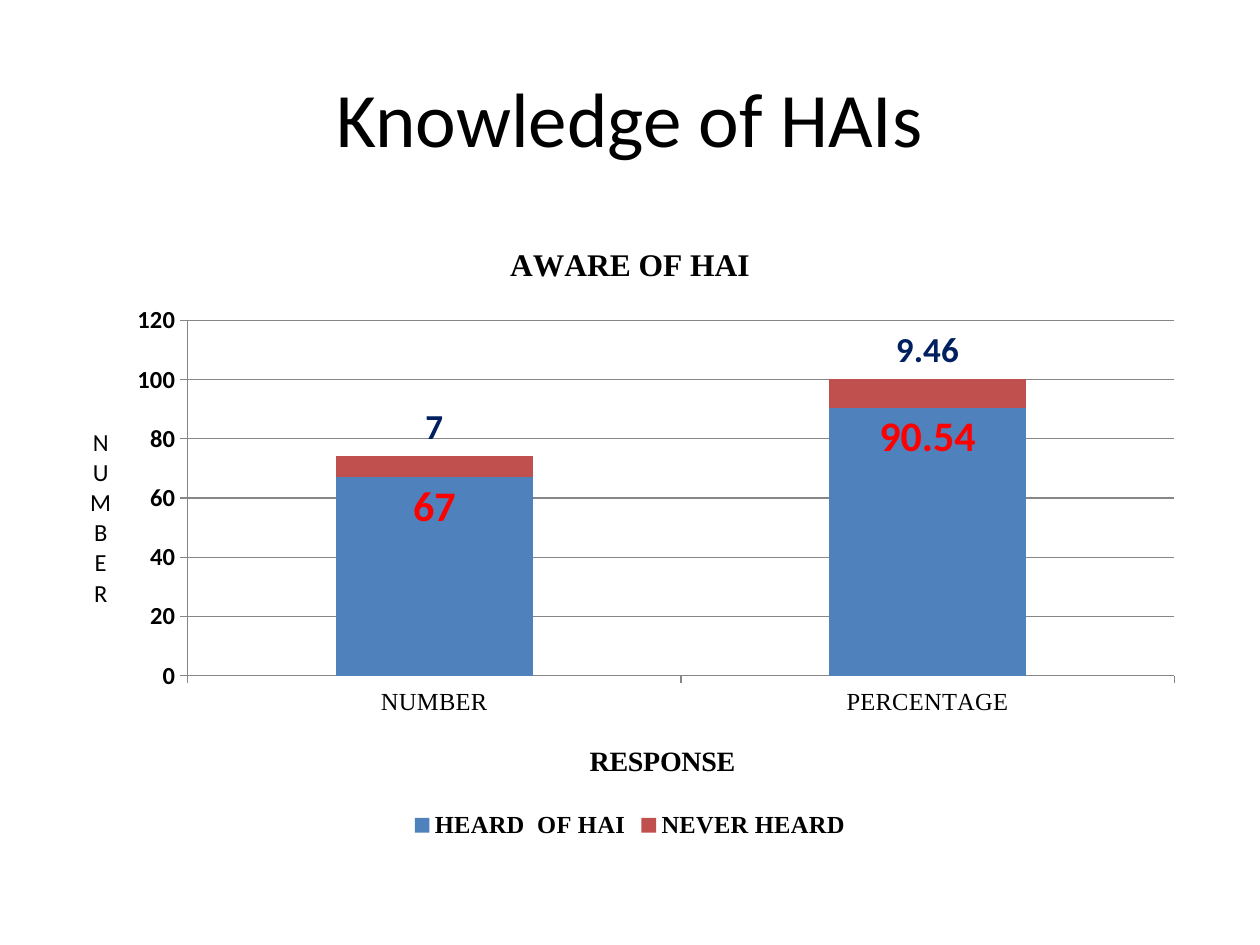
"""Build the slide about knowledge of HAIs with its stacked column chart."""
from lxml import etree
from pptx import Presentation
from pptx import util as u
from pptx.chart.data import CategoryChartData
from pptx.dml.color import RGBColor
from pptx.enum import chart as charts, text
from pptx.oxml import ns

COLORS = {"ink": "000000", "heard": "4F81BD", "never": "C0504D",
          "heard_label": "FF0000", "never_label": "002060", "line": "868686"}
SERIF, SANS = "Times New Roman", "Calibri"


def style_font(font, color="ink", **formats):
    """Set the colour and the given attributes of a font."""
    font.color.rgb = RGBColor.from_string(COLORS[color])
    for name, value in formats.items():
        setattr(font, name, value)


def place(element, index, **values):
    """Give a chart element a manual layout as child number index."""
    for former in element.findall(ns.qn("c:layout")):
        element.remove(former)
    layout = etree.Element(ns.qn("c:layout"))
    manual = etree.SubElement(layout, ns.qn("c:manualLayout"))
    for name, value in values.items():
        etree.SubElement(manual, ns.qn(f"c:{name}")).set("val", str(value))
    element.insert(index, layout)


def add_title(page, words):
    """Fill and format the title placeholder."""
    box = page.shapes.title
    box.left, box.top = u.Inches(0.5), u.Inches(0.3)
    box.width, box.height = u.Inches(9), u.Inches(1.25)
    box.text_frame.vertical_anchor = text.MSO_ANCHOR.MIDDLE
    para = box.text_frame.paragraphs[0]
    para.alignment = text.PP_ALIGN.CENTER
    span = para.add_run()
    span.text = words
    style_font(span.font, name=SANS, size=u.Pt(44))


def add_chart(page):
    """Add the stacked column chart and return it."""
    data = CategoryChartData()
    data.categories = ["NUMBER", "PERCENTAGE"]
    data.add_series("HEARD  OF HAI", [67, 90.54])
    data.add_series("NEVER HEARD", [7, 9.46])
    chart = page.shapes.add_chart(
        charts.XL_CHART_TYPE.COLUMN_STACKED, u.Inches(0.5), u.Inches(1.75),
        u.Inches(9), u.Inches(4.95), data).chart
    style_font(chart.font, name=SANS, size=u.Pt(10))
    plot = chart.plots[0]
    plot.gap_width, plot.overlap, plot.vary_by_categories = 150, 100, False
    area = chart._chartSpace.find(".//" + ns.qn("c:plotArea"))
    place(area, 0, layoutTarget="inner", xMode="edge", yMode="edge",
          x=0.11, y=0.16, w=0.87, h=0.57)
    return chart


def write_heading(owner, words, **formats):
    """Write the title of a chart or an axis and return it."""
    owner.has_title = True
    title = owner.chart_title if hasattr(owner, "chart_title") else owner.axis_title
    span = title.text_frame.paragraphs[0].add_run()
    span.text = words
    style_font(span.font, **formats)
    return title


def style_axis(axis, words, title_format, tick_format, x, y):
    """Format an axis with its ticks, line and title."""
    axis.major_tick_mark = charts.XL_TICK_MARK.OUTSIDE
    axis.minor_tick_mark = charts.XL_TICK_MARK.NONE
    style_font(axis.tick_labels.font, size=u.Pt(14), **tick_format)
    style_line(axis.format.line)
    title = write_heading(axis, words, **title_format)
    place(title._element, 1, xMode="edge", yMode="edge", x=x, y=y)
    return title


def style_line(line):
    """Give an axis or grid line its colour and width."""
    line.color.rgb = RGBColor.from_string(COLORS["line"])
    line.width = u.Pt(0.75)


def style_series(series, key, size):
    """Colour a series and show its values."""
    series.format.fill.solid()
    series.format.fill.fore_color.rgb = RGBColor.from_string(COLORS[key])
    labels = series.data_labels
    labels.show_value = True
    labels.position = charts.XL_LABEL_POSITION.INSIDE_END
    style_font(labels.font, f"{key}_label", size=u.Pt(size), bold=True)


def lift_labels(series, key, size):
    """Move the value labels of a series above its columns."""
    for index in range(len(series.values)):
        label = series.points[index].data_label
        style_font(label.font, f"{key}_label", size=u.Pt(size), bold=True)
        label.position = charts.XL_LABEL_POSITION.INSIDE_END
    for element in series._element.iter(ns.qn("c:dLbl")):
        place(element, 1, x=0, y=-0.09)


def add_legend(chart):
    """Put the legend below the plot."""
    chart.has_legend = True
    chart.legend.position = charts.XL_LEGEND_POSITION.BOTTOM
    chart.legend.include_in_layout = False
    style_font(chart.legend.font, name=SERIF, size=u.Pt(14), bold=True)


def main():
    """Build and save the deck."""
    deck = Presentation()
    deck.slide_width, deck.slide_height = u.Inches(10), u.Inches(7.5)
    page = deck.slides.add_slide(deck.slide_layouts[5])
    add_title(page, "Knowledge of HAIs")
    chart = add_chart(page)
    write_heading(chart, "AWARE OF HAI", name=SERIF, size=u.Pt(18), bold=True)
    style_axis(chart.category_axis, "RESPONSE",
               {"name": SERIF, "size": u.Pt(16), "bold": True},
               {"name": SERIF, "bold": False}, 0.46, 0.83)
    values = chart.value_axis
    values.minimum_scale, values.maximum_scale, values.major_unit = 0, 120, 20
    values.has_major_gridlines = True
    style_line(values.major_gridlines.format.line)
    title = style_axis(values, "NUMBER",
                       {"name": SANS, "size": u.Pt(14), "bold": False},
                       {"name": SANS, "bold": True}, 0.02, 0.32)
    body = title.text_frame._txBody.find(ns.qn("a:bodyPr"))
    body.set("rot", "0")
    body.set("vert", "wordArtVert")
    heard, never = chart.plots[0].series
    style_series(heard, "heard", 24)
    style_series(never, "never", 20)
    lift_labels(never, "never", 20)
    add_legend(chart)
    deck.save("out.pptx")


if __name__ == "__main__":
    main()
